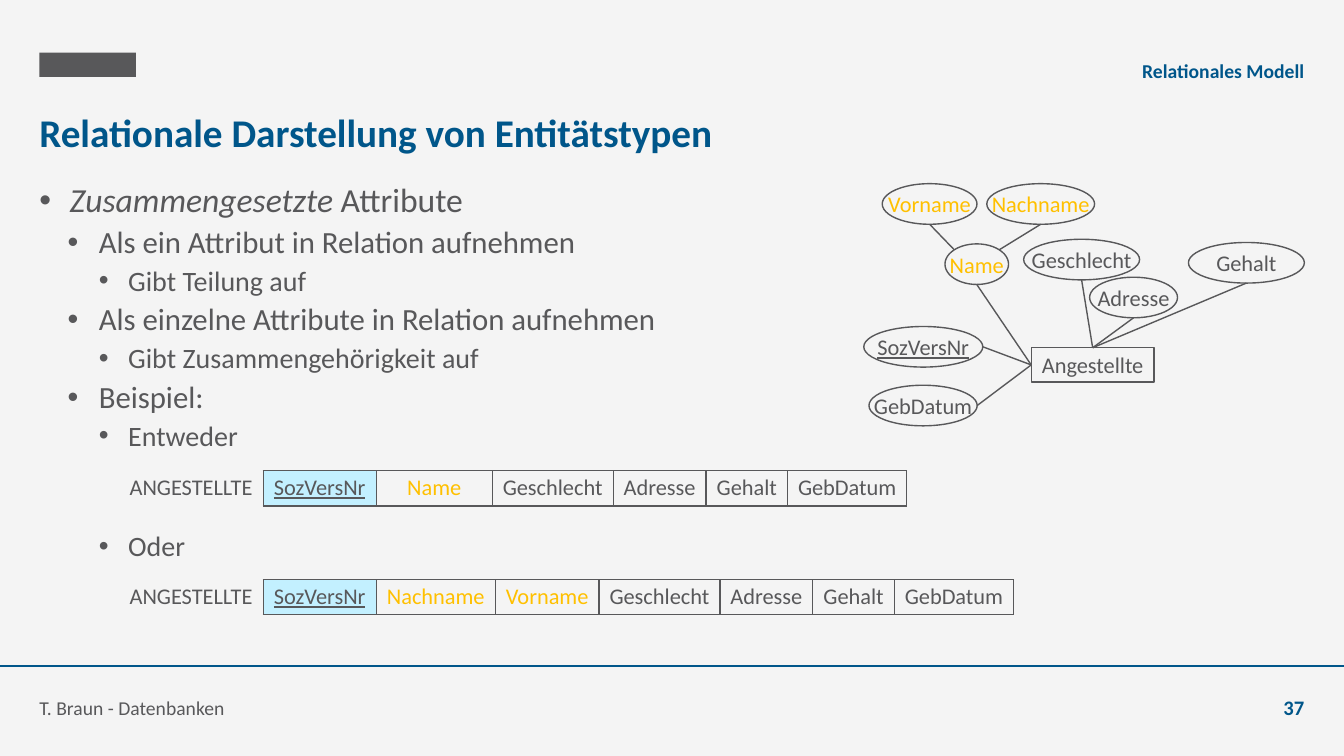
"""Build the slide on the relational form of composite attributes."""
from math import sqrt

from lxml import etree
from pptx import Presentation
from pptx.dml.color import RGBColor
from pptx.enum.shapes import MSO_CONNECTOR, MSO_SHAPE
from pptx.enum.text import MSO_ANCHOR, MSO_AUTO_SIZE, PP_ALIGN
from pptx.oxml.ns import qn
from pptx.util import Pt

BLUE = RGBColor(0x00, 0x56, 0x8A)
GREY = RGBColor(0x58, 0x58, 0x5A)
GOLD = RGBColor(0xFF, 0xC0, 0x00)
CYAN = RGBColor(0xC3, 0xF0, 0xFF)
PALE = RGBColor(0xF4, 0xF4, 0xF4)
LEFT, MID, RIGHT = PP_ALIGN.LEFT, PP_ALIGN.CENTER, PP_ALIGN.RIGHT
TOP, CENTER, LOW = MSO_ANCHOR.TOP, MSO_ANCHOR.MIDDLE, MSO_ANCHOR.BOTTOM
RECT, OVAL, LINE = MSO_SHAPE.RECTANGLE, MSO_SHAPE.OVAL, MSO_CONNECTOR.STRAIGHT
FIXED = MSO_AUTO_SIZE.NONE
FONT = "Calibri"

TITLE = "Relationale Darstellung von Entitätstypen"
POINTS = [
    (0, "Zusammengesetzte Attribute"),
    (1, "Als ein Attribut in Relation aufnehmen"),
    (2, "Gibt Teilung auf"),
    (1, "Als einzelne Attribute in Relation aufnehmen"),
    (2, "Gibt Zusammengehörigkeit auf"),
    (1, "Beispiel:"),
    (2, "Entweder"),
    (2, "Oder"),
]
LEVELS = [(24, 21.6, 21.6), (22, 42.5, 22.3), (20, 63.4, 20.9)]
GAP, OPEN = 5, 57.5
LABELS = [
    ("Relationales Modell", 283, 31, 648.7, RIGHT, 14, BLUE, True),
    ("T. Braun - Datenbanken", 28.1, 486, 662.4, LEFT, 14, GREY, False),
    ("37", 874.8, 486, 56.9, RIGHT, 14.7, BLUE, True),
]
KEY = "SozVersNr"
PARTS = ("Name", "Vorname", "Nachname")
ENTITY = ("Angestellte", 736.6, 248.4, 87.8, 24.5)
OVALS = [
    (KEY, 617, 233.2, 85, "left"),
    ("GebDatum", 620.7, 275.2, 77.3, "left"),
    ("Geschlecht", 731.2, 170.9, 82.8, "top"),
    ("Adresse", 778.3, 198, 62.8, "top"),
    ("Gehalt", 848.9, 173.2, 82.8, "top"),
    ("Name", 675, 174.2, 45.4, "name"),
    ("Vorname", 630.2, 131.2, 67.7, "part"),
    ("Nachname", 704.9, 131.2, 77, "part"),
]
TALL = 29
WIDTHS = {"ANGESTELLTE": 103, KEY: 80.8, "Name": 82.8, "Nachname": 85, "Vorname": 74.1,
          "Geschlecht": 86.4, "Adresse": 66.3, "Gehalt": 58.4, "GebDatum": 85}
REST = ["Geschlecht", "Adresse", "Gehalt", "GebDatum"]
TABLES = [
    (336.2, ["ANGESTELLTE", KEY, "Name"] + REST),
    (414, ["ANGESTELLTE", KEY, "Nachname", "Vorname"] + REST),
]


def style(para, size, color, bold=False, align=LEFT):
    para.alignment = align
    for run in para.runs:
        font = run.font
        font.name, font.size, font.bold = FONT, Pt(size), bold
        font.color.rgb = color


def frame(shape, anchor, wrap=True):
    text = shape.text_frame
    text.auto_size, text.word_wrap, text.vertical_anchor = FIXED, wrap, anchor
    text.margin_left = text.margin_right = text.margin_top = text.margin_bottom = 0
    return text


def place(shape, x, y, w, h):
    shape.left, shape.top, shape.width, shape.height = Pt(x), Pt(y), Pt(w), Pt(h)


def attr(para, name):
    style(para, 16, GOLD if name in PARTS else GREY, align=MID)
    para.runs[0].font.underline = name == KEY


def block(slide, x, y, w, h, color):
    shape = slide.shapes.add_shape(RECT, Pt(x), Pt(y), Pt(w), Pt(h))
    shape.shadow.inherit = False
    shape.fill.solid()
    shape.fill.fore_color.rgb = color
    shape.line.fill.background()


def node(slide, kind, name, x, y, w, h):
    shape = slide.shapes.add_shape(kind, Pt(x), Pt(y), Pt(w), Pt(h))
    shape.shadow.inherit = False
    shape.fill.solid()
    shape.fill.fore_color.rgb = PALE
    shape.line.color.rgb, shape.line.width = GREY, Pt(1)
    text = frame(shape, CENTER, False)
    text.text = name
    attr(text.paragraphs[0], name)
    return shape


def link(slide, start, end):
    line = slide.shapes.add_connector(LINE, *(Pt(v) for v in start + end))
    line.line.color.rgb, line.line.width = GREY, Pt(1)
    etree.SubElement(line._element.spPr, qn("a:effectLst"))
    return line


def outline(slide):
    body = slide.placeholders[1]
    place(body, 28.1, 131, 903.6, 334)
    text = frame(body, TOP)
    text.text = "\n".join(words for _, words in POINTS)
    for para, (level, words) in zip(text.paragraphs, POINTS):
        if level == 0:
            first, rest = words.split(" ")
            para.runs[0].text = first
            para.add_run().text = " " + rest
            para.runs[0].font.italic = True
        size, indent, hang = LEVELS[level]
        para.level, para.line_spacing = level, 0.9
        para.space_before = Pt(OPEN if words == "Oder" else GAP)
        style(para, size, GREY)
        props = para._p.get_or_add_pPr()
        props.set("marL", str(Pt(indent)))
        props.set("indent", str(-Pt(hang)))
        etree.SubElement(props, qn("a:buChar")).set("char", "•")


def diagram(slide):
    name, x, y, w, h = ENTITY
    entity = node(slide, RECT, *ENTITY)
    left, top = (x, y + h / 2), (x + w / 2, y)
    for name, x, y, w, side in OVALS:
        node(slide, OVAL, name, x, y, w, TALL)
        mid = x + w / 2
        if side == "part":
            sign = 1 if mid > hub[0] else -1
            start = (hub[0] + sign * hub[2] / sqrt(8), hub[1] - TALL / sqrt(8))
            link(slide, start, (mid, y + TALL))
            continue
        if side == "name":
            hub = (mid, y + TALL / 2, w)
        end = (x + w, y + TALL / 2) if side == "left" else (mid, y + TALL)
        line = link(slide, top if side == "top" else left, end)
        line.begin_connect(entity, 0 if side == "top" else 1)


def border(cell, sides):
    props = cell._tc.get_or_add_tcPr()
    for i, side in enumerate("LRTB"):
        edge = etree.Element(qn("a:ln" + side), w=str(Pt(1)))
        if side in sides:
            fill = etree.SubElement(edge, qn("a:solidFill"))
            etree.SubElement(fill, qn("a:srgbClr"), val=str(GREY))
        else:
            etree.SubElement(edge, qn("a:noFill"))
        props.insert(i, edge)


def relation(slide, y, names):
    wide = sum(WIDTHS[name] for name in names)
    table = slide.shapes.add_table(1, len(names), Pt(85), Pt(y), Pt(wide), Pt(25.2)).table
    table.first_row = table.horz_banding = False
    for i, name in enumerate(names):
        table.columns[i].width = Pt(WIDTHS[name])
        cell = table.cell(0, i)
        cell.text = name
        cell.vertical_anchor = CENTER
        cell.margin_left = cell.margin_right = Pt(5.5)
        cell.margin_top = cell.margin_bottom = Pt(2.8)
        attr(cell.text_frame.paragraphs[0], name)
        if name == KEY:
            cell.fill.solid()
            cell.fill.fore_color.rgb = CYAN
        else:
            cell.fill.background()
        border(cell, "LRTB" if i else "R")


def main():
    deck = Presentation()
    deck.slide_width, deck.slide_height = Pt(960), Pt(540)
    slide = deck.slides.add_slide(deck.slide_layouts[1])
    slide.background.fill.solid()
    slide.background.fill.fore_color.rgb = PALE
    block(slide, 28.1, 37.5, 69, 17.5, GREY)
    block(slide, 0, 475, 960, 1.4, BLUE)
    title = slide.shapes.title
    place(title, 28.1, 71.3, 903.6, 45.4)
    text = frame(title, CENTER)
    text.text = TITLE
    style(text.paragraphs[0], 28, BLUE, True)
    outline(slide)
    diagram(slide)
    for y, names in TABLES:
        relation(slide, y, names)
    for words, x, y, w, align, size, color, bold in LABELS:
        text = frame(slide.shapes.add_textbox(Pt(x), Pt(y), Pt(w), Pt(28.1)), LOW)
        text.text = words
        style(text.paragraphs[0], size, color, bold, align)
    deck.save("out.pptx")


if __name__ == "__main__":
    main()
